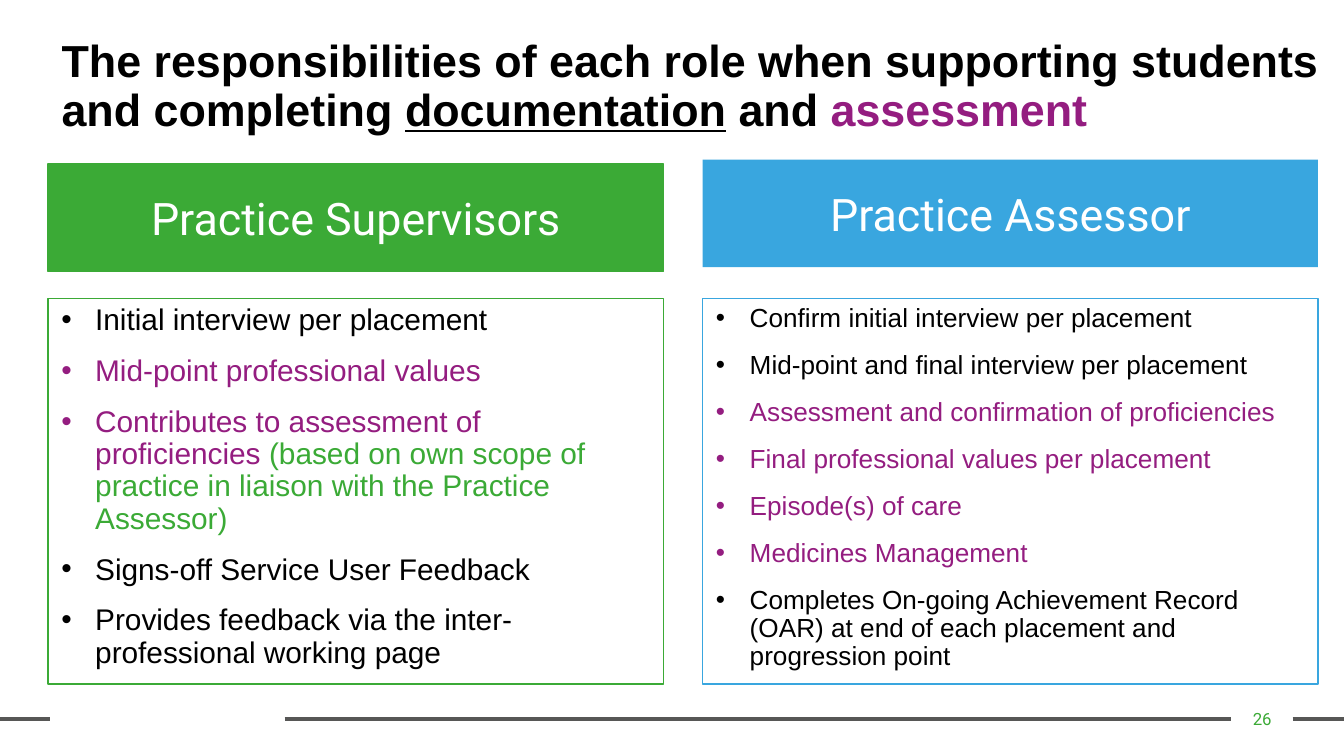
from dataclasses import dataclass

from lxml.etree import SubElement
from pptx import Presentation
from pptx.dml.color import RGBColor
from pptx.enum.shapes import MSO_CONNECTOR, MSO_SHAPE
from pptx.enum.text import MSO_ANCHOR, MSO_AUTO_SIZE, PP_ALIGN
from pptx.oxml.ns import qn
from pptx.util import Cm, Pt


@dataclass(frozen=True)
class Theme:
    black: str = "000000"
    white: str = "FFFFFF"
    grey: str = "575756"
    green: str = "3BAA36"
    blue: str = "39A6DF"
    purple: str = "941D80"
    body_font: str = "Arial"
    heading_font: str = "Roboto"
    title_size: int = 24
    heading_size: int = 24
    supervisor_size: int = 16
    assessor_size: int = 14
    number_size: int = 9


theme = Theme()


def write_runs(paragraph, parts, font_name, size):
    """Add (text, colour) parts to a paragraph and return the runs."""
    runs = []
    for text, colour in parts:
        run = paragraph.add_run()
        run.text = text
        run.font.name = font_name
        run.font.size = Pt(size)
        run.font.color.rgb = RGBColor.from_string(colour)
        runs.append(run)
    return runs


def add_box(left, top, height, line_colour, fill_colour=None):
    """Add a column-wide rectangle, outlined and filled as asked."""
    shape = slide.shapes.add_shape(
        MSO_SHAPE.RECTANGLE, Cm(left), Cm(top), Cm(11.63), Cm(height))
    shape.shadow.inherit = False
    if fill_colour:
        shape.fill.solid()
        shape.fill.fore_color.rgb = RGBColor.from_string(fill_colour)
    else:
        shape.fill.background()
    if line_colour:
        shape.line.color.rgb = RGBColor.from_string(line_colour)
        shape.line.width = Pt(0.75)
    else:
        shape.line.fill.background()
    shape.text_frame.word_wrap = True
    return shape


presentation = Presentation()
presentation.slide_width = Cm(25.4)
presentation.slide_height = Cm(14.29)
slide = presentation.slides.add_slide(presentation.slide_layouts[5])

# Footer rule, broken for the footer and the page number
for start, end in [(24.43, 25.4), (5.38, 23.27), (0, 0.94)]:
    rule = slide.shapes.add_connector(
        MSO_CONNECTOR.STRAIGHT, Cm(start), Cm(13.59), Cm(end), Cm(13.59))
    rule.line.color.rgb = RGBColor.from_string(theme.grey)
    rule.line.width = Pt(2.25)
    SubElement(rule._element.spPr, qn("a:effectLst"))

# Page number
number = slide.shapes.add_textbox(Cm(23.27), Cm(13.21), Cm(1.17), Cm(0.76))
number_frame = number.text_frame
number_frame.word_wrap = True
number_frame.vertical_anchor = MSO_ANCHOR.MIDDLE
number_frame.margin_left = number_frame.margin_right = Cm(0.18)
number_frame.margin_top = number_frame.margin_bottom = Cm(0.1)
number_frame.paragraphs[0].alignment = PP_ALIGN.CENTER
write_runs(number_frame.paragraphs[0], [("26", theme.green)],
           theme.heading_font, theme.number_size)

# Title
title = slide.shapes.title
title.left, title.top, title.width, title.height = Cm(0.91), Cm(0.61), Cm(24.79), Cm(1.8)
title_frame = title.text_frame
title_frame.word_wrap = True
title_frame.auto_size = MSO_AUTO_SIZE.NONE
title_frame.vertical_anchor = MSO_ANCHOR.TOP
title_paragraph = title_frame.paragraphs[0]
title_paragraph.alignment = PP_ALIGN.LEFT
title_paragraph.line_spacing = 0.9
title_runs = write_runs(title_paragraph, [
    ("The responsibilities of each role when supporting students and completing ", theme.black),
    ("documentation", theme.black),
    (" and ", theme.black),
    ("assessment", theme.purple),
], theme.body_font, theme.title_size)
for run in title_runs:
    run.font.bold = True
title_runs[1].font.underline = True

# Role columns: left, heading top, heading, fill, heading line, text size, bullets
columns = [
    (0.91, 3.1, "Practice Supervisors", theme.green, theme.green, theme.supervisor_size, [
        [("Initial interview per placement", theme.black)],
        [("Mid-point professional values", theme.purple)],
        [("Contributes to assessment of proficiencies ", theme.purple),
         ("(based on own scope of practice in liaison with the Practice Assessor)", theme.green)],
        [("Signs-off Service User Feedback", theme.black)],
        [("Provides feedback via the inter-professional working page", theme.black)],
    ]),
    (13.28, 3.02, "Practice Assessor", theme.blue, None, theme.assessor_size, [
        [("Confirm initial interview per placement", theme.black)],
        [("Mid-point and final interview per placement", theme.black)],
        [("Assessment and confirmation of proficiencies", theme.purple)],
        [("Final professional values per placement", theme.purple)],
        [("Episode(s) of care", theme.purple)],
        [("Medicines Management", theme.purple)],
        [("Completes On-going Achievement Record (OAR) at end of each placement "
          "and progression point", theme.black)],
    ]),
]

for left, heading_top, heading, colour, heading_line, size, bullets in columns:
    # Bulleted list
    list_frame = add_box(left, 5.64, 7.29, colour).text_frame
    list_frame.vertical_anchor = MSO_ANCHOR.TOP
    for index, parts in enumerate(bullets):
        paragraph = list_frame.add_paragraph() if index else list_frame.paragraphs[0]
        properties = paragraph._p.get_or_add_pPr()
        properties.set("marL", str(Cm(0.64)))
        properties.set("indent", str(-Cm(0.64)))
        SubElement(properties, qn("a:buFont"), typeface=theme.body_font)
        SubElement(properties, qn("a:buChar"), char="•")
        paragraph.alignment = PP_ALIGN.LEFT
        paragraph.line_spacing = 0.9
        paragraph.space_before = Pt(10 if index else 0)
        write_runs(paragraph, parts, theme.body_font, size)

    # Heading
    heading_frame = add_box(left, heading_top, 2.03, heading_line, colour).text_frame
    heading_frame.vertical_anchor = MSO_ANCHOR.MIDDLE
    heading_frame.paragraphs[0].alignment = PP_ALIGN.CENTER
    write_runs(heading_frame.paragraphs[0], [(heading, theme.white)],
               theme.heading_font, theme.heading_size)

presentation.save("out.pptx")
